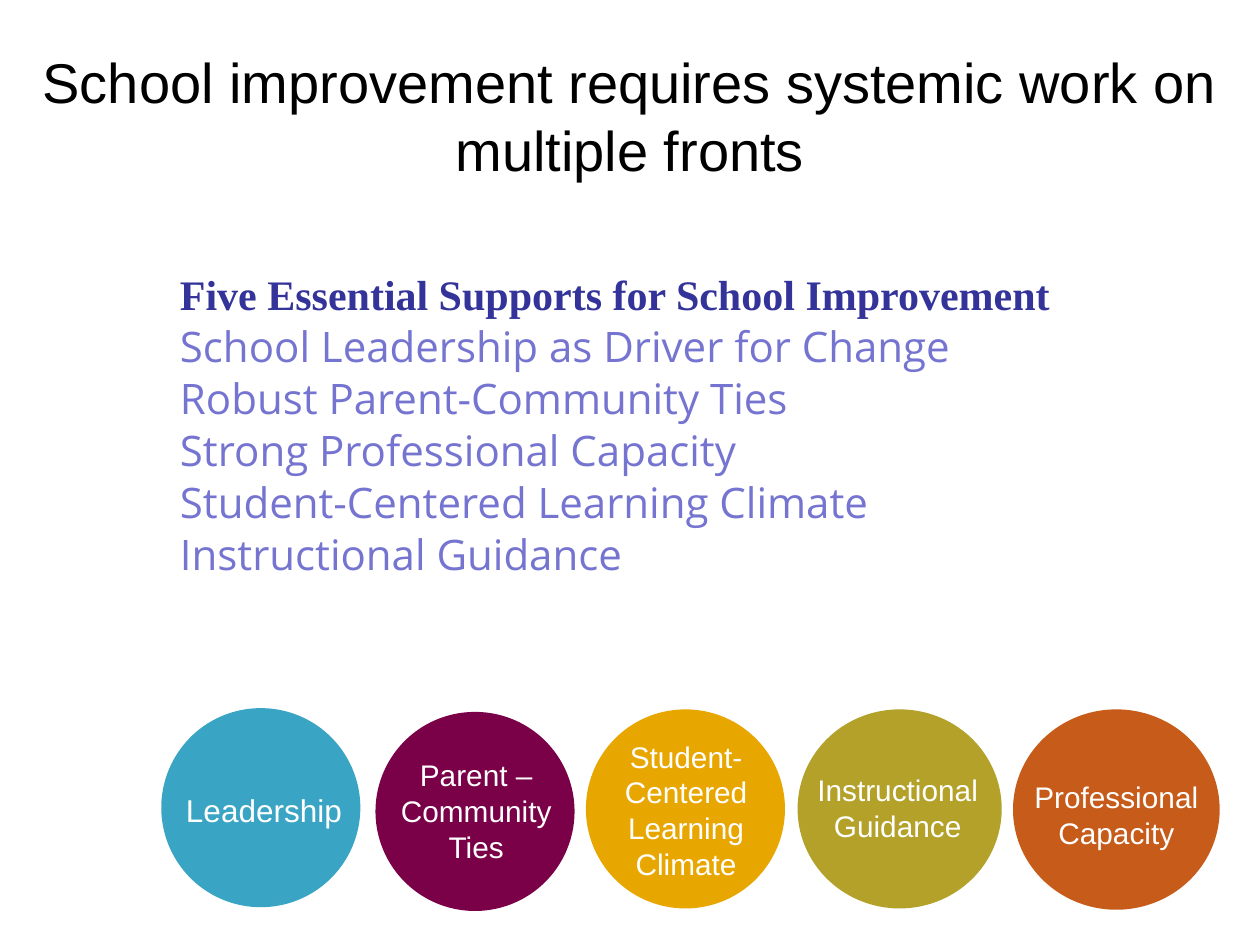
from pptx import Presentation, util as u
from pptx.dml.color import RGBColor
from pptx.enum import shapes, text

THEME = {
    "title": ("Arial", 32, "000000", False),
    "head": ("Times New Roman", 24, "333399", True),
    "item": ("Open Sans", 24, "7575D1", False),
    "lead": ("Arial", 18, "FFFFFF", False),
    "label": ("Arial", 17, "FFFFFF", False),
}
TITLE = "School improvement requires systemic work on multiple fronts"
HEAD = "Five Essential Supports for School Improvement"
ITEMS = [
    "School Leadership as Driver for Change",
    "Robust Parent-Community Ties",
    "Strong Professional Capacity",
    "Student-Centered Learning Climate",
    "Instructional Guidance",
]
DISCS = [
    ("Leadership", "lead", "39A4C3", (1.28, 5.62, 1.58, 1.58), (1.31, 6.23, 1.57, 0.4)),
    ("Parent –Community\nTies", "label", "7A0047", (2.98, 5.65, 1.58, 1.58), (3.08, 5.96, 1.4, 0.96)),
    ("Student-\vCentered Learning Climate", "label", "E8A600", (4.65, 5.63, 1.58, 1.58), (4.64, 5.81, 1.61, 1.25)),
    ("Instructional Guidance", "label", "B3A129", (6.33, 5.63, 1.62, 1.58), (6.33, 6.08, 1.59, 0.67)),
    ("Professional Capacity", "label", "C65B1A", (8.04, 5.63, 1.64, 1.59), (8.04, 6.13, 1.64, 0.68)),
]


def place(box):
    return [u.Inches(n) for n in box]


def style(para, kind, align):
    name, size, color, bold = THEME[kind]
    para.alignment = align
    for run in para.runs:
        font = run.font
        font.name, font.size, font.bold = name, u.Pt(size), bold
        font.color.rgb = RGBColor.from_string(color)


def write(shape, words, kinds, align=text.PP_ALIGN.CENTER):
    frame = shape.text_frame
    frame.text = words
    frame.word_wrap = True
    frame.auto_size = text.MSO_AUTO_SIZE.NONE
    frame.vertical_anchor = text.MSO_ANCHOR.TOP
    for i, para in enumerate(frame.paragraphs):
        style(para, kinds[min(i, len(kinds) - 1)], align)
    return frame


def main():
    deck = Presentation()
    deck.slide_width, deck.slide_height = place((10, 7.5))
    slide = deck.slides.add_slide(deck.slide_layouts[5])

    title = slide.shapes.title
    title.left, title.top, title.width, title.height = place((0, 0.33, 10, 1.18))
    write(title, TITLE, ["title"])

    body = slide.shapes.add_textbox(*place((1.33, 2.08, 8.31, 2.9)))
    frame = write(body, "\n".join([HEAD] + ITEMS), ["head", "item"], text.PP_ALIGN.LEFT)
    for para in frame.paragraphs[1:]:
        para.space_before = u.Pt(0.9)

    for words, kind, color, disc, label in DISCS:
        oval = slide.shapes.add_shape(shapes.MSO_SHAPE.OVAL, *place(disc))
        oval.shadow.inherit = False
        oval.fill.solid()
        oval.fill.fore_color.rgb = RGBColor.from_string(color)
        oval.line.fill.background()
        write(slide.shapes.add_textbox(*place(label)), words, [kind])

    deck.save("out.pptx")


if __name__ == "__main__":
    main()
